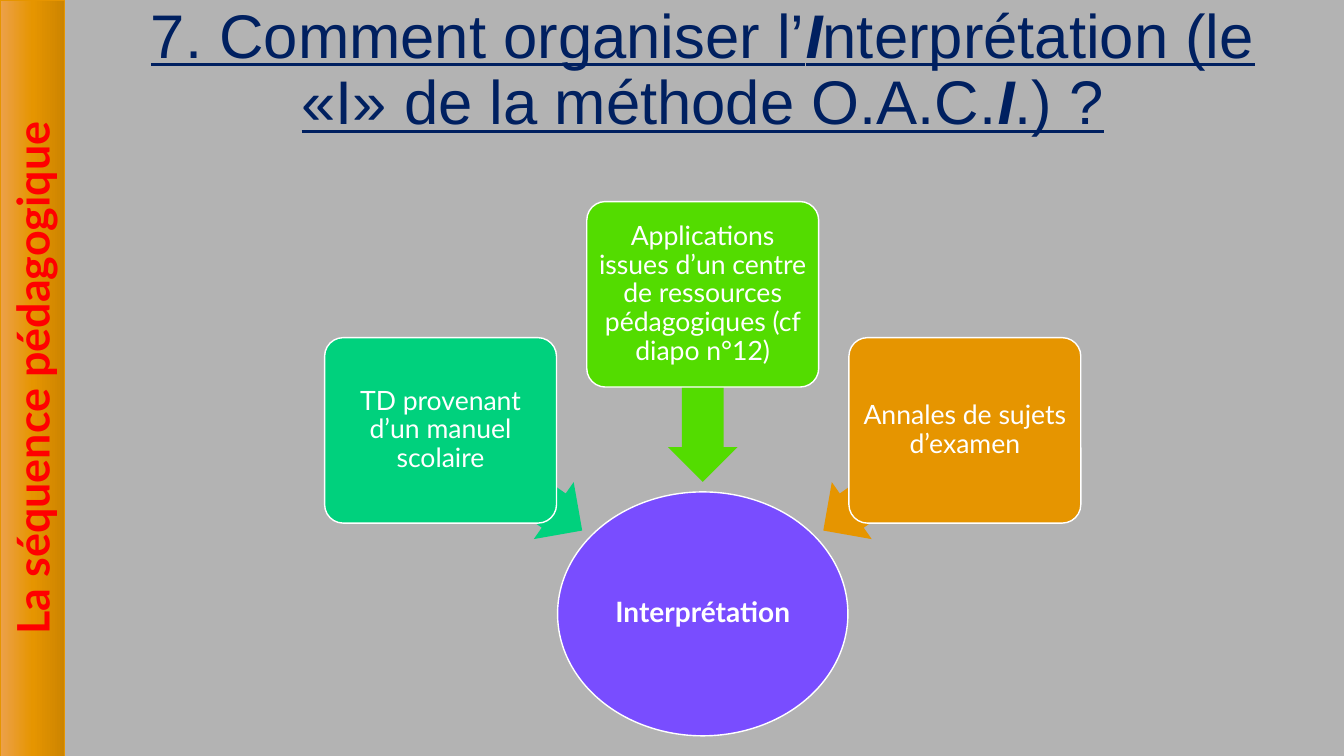
from copy import deepcopy
from dataclasses import dataclass

from pptx import Presentation
from pptx import util as u
from pptx.dml import color
from pptx.enum import shapes, text
from pptx.oxml import ns

WHITE, RED, NAVY, ORANGE = "FFFFFF", "FF0000", "002060", "E69500"
CENTER_X = 6.97


@dataclass
class Source:
    label: str
    fill: str
    card_x: float
    card_y: float
    arrow_x: float
    arrow_y: float
    arrow_w: float
    rotation: float


def rgb(value: str) -> color.RGBColor:
    return color.RGBColor.from_string(value)


def write(p, content: str, *, size: float, font: str, fill: str,
          bold: bool = False, italic: bool = False, underline: bool = False):
    """Add a formatted run to a paragraph."""
    r = p.add_run()
    r.text = content
    f = r.font
    f.size, f.name = u.Pt(size), font
    f.bold, f.italic, f.underline = bold, italic, underline
    f.color.rgb = rgb(fill)


def frame(sp, anchor, inset: tuple[float, float], spacing: float):
    """Prepare a text frame and return its centred first paragraph."""
    tf = sp.text_frame
    tf.word_wrap, tf.vertical_anchor = True, anchor
    tf.margin_left = tf.margin_right = u.Inches(inset[0])
    tf.margin_top = tf.margin_bottom = u.Inches(inset[1])
    p = tf.paragraphs[0]
    p.alignment, p.line_spacing = text.PP_ALIGN.CENTER, spacing
    return p


def add_centered(parent, kind, cx: float, cy: float, w: float, h: float,
                 fill: str, line: str | None = None, rotation: float = 0):
    """Draw a preset shape around its centre point."""
    sp = parent.add_shape(kind, u.Inches(cx - w / 2), u.Inches(cy - h / 2),
                          u.Inches(w), u.Inches(h))
    sp.shadow.inherit = False
    sp.rotation = rotation
    sp.fill.solid()
    sp.fill.fore_color.rgb = rgb(fill)
    if line:
        sp.line.color.rgb, sp.line.width = rgb(line), u.Pt(1)
    else:
        sp.line.fill.background()
    return sp


def add_banner(s) -> None:
    sp = add_centered(s.shapes, shapes.MSO_SHAPE.RECTANGLE, 0.32, 3.75,
                      7.5, 0.64, ORANGE, ORANGE, 270)
    sp.line.width = u.Pt(0.5)
    sp.fill.gradient()
    sp.fill.gradient_angle = 270
    stops = next(sp._element.iter(ns.qn("a:gsLst")))
    stops.insert(1, deepcopy(stops[0]))
    for stop, position, value in zip(sp.fill.gradient_stops, (0, 0.5, 1),
                                     ("ECA14B", ORANGE, "CC8400")):
        stop.position, stop.color.rgb = position, rgb(value)
    p = frame(sp, text.MSO_ANCHOR.TOP, (0.1, 0.05), 1.0)
    sp.text_frame.auto_size = text.MSO_AUTO_SIZE.SHAPE_TO_FIT_TEXT
    write(p, "La séquence pédagogique", size=32, font="Lato", fill=RED, bold=True)


def add_title(s) -> None:
    sp = s.shapes.add_textbox(u.Inches(0.9), 0, u.Inches(12.14), u.Inches(1.5))
    p = frame(sp, text.MSO_ANCHOR.TOP, (0.1, 0.05), 0.9)
    parts = ("7. Comment organiser l’", "I",
             "nterprétation (le «I» de la méthode O.A.C.", "I", ".) ?")
    for part in parts:
        strong = part == "I"
        write(p, part, size=44, font="Arial", fill=NAVY,
              bold=strong, italic=strong, underline=True)


def add_source(parent, source: Source) -> None:
    arrow = add_centered(parent, shapes.MSO_SHAPE.LEFT_ARROW, source.arrow_x,
                         source.arrow_y, source.arrow_w, 0.69, source.fill,
                         rotation=source.rotation)
    arrow.adjustments[0], arrow.adjustments[1] = 0.6, 0.5
    card = add_centered(parent, shapes.MSO_SHAPE.ROUNDED_RECTANGLE, source.card_x,
                        source.card_y, 2.3, 1.84, source.fill, WHITE)
    card.adjustments[0] = 0.1
    p = frame(card, text.MSO_ANCHOR.MIDDLE, (0.04, 0.04), 0.9)
    write(p, source.label, size=19, font="Lato", fill=WHITE)


def add_diagram(s) -> None:
    parent = s.shapes.add_group_shape().shapes
    # Central idea
    hub = add_centered(parent, shapes.MSO_SHAPE.OVAL, CENTER_X, 6.09,
                       2.88, 2.42, "794DFF", WHITE)
    p = frame(hub, text.MSO_ANCHOR.MIDDLE, (0.01, 0.01), 0.9)
    write(p, "Interprétation", size=20, font="Lato", fill=WHITE, bold=True)
    # Sources pointing to it
    for source in (
        Source("TD provenant d’un manuel scolaire", "00D17D",
               CENTER_X - 2.6, 4.27, CENTER_X - 1.9, 4.77, 1.72, 215),
        Source("Applications issues d’un centre de ressources pédagogiques "
               "(cf diapo n°12)", "53DC00",
               CENTER_X, 2.92, CENTER_X, 3.85, 1.86, 270),
        Source("Annales de sujets d’examen", ORANGE,
               CENTER_X + 2.6, 4.27, CENTER_X + 1.9, 4.77, 1.72, 325),
    ):
        add_source(parent, source)


def main() -> None:
    prs = Presentation()
    prs.slide_width, prs.slide_height = u.Inches(13.33), u.Inches(7.5)
    s = prs.slides.add_slide(prs.slide_layouts[6])
    s.background.fill.solid()
    s.background.fill.fore_color.rgb = rgb("B3B3B3")
    add_banner(s)
    add_title(s)
    add_diagram(s)
    prs.save("out.pptx")


if __name__ == "__main__":
    main()
